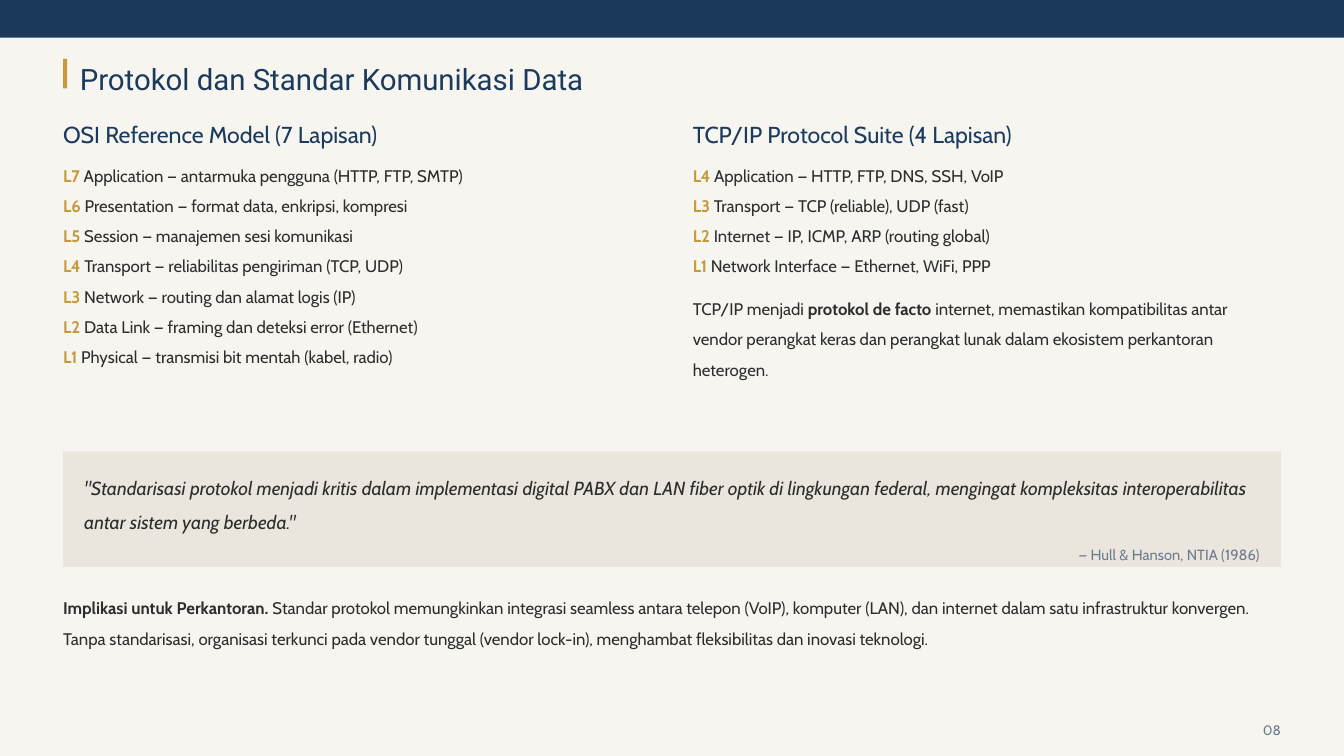
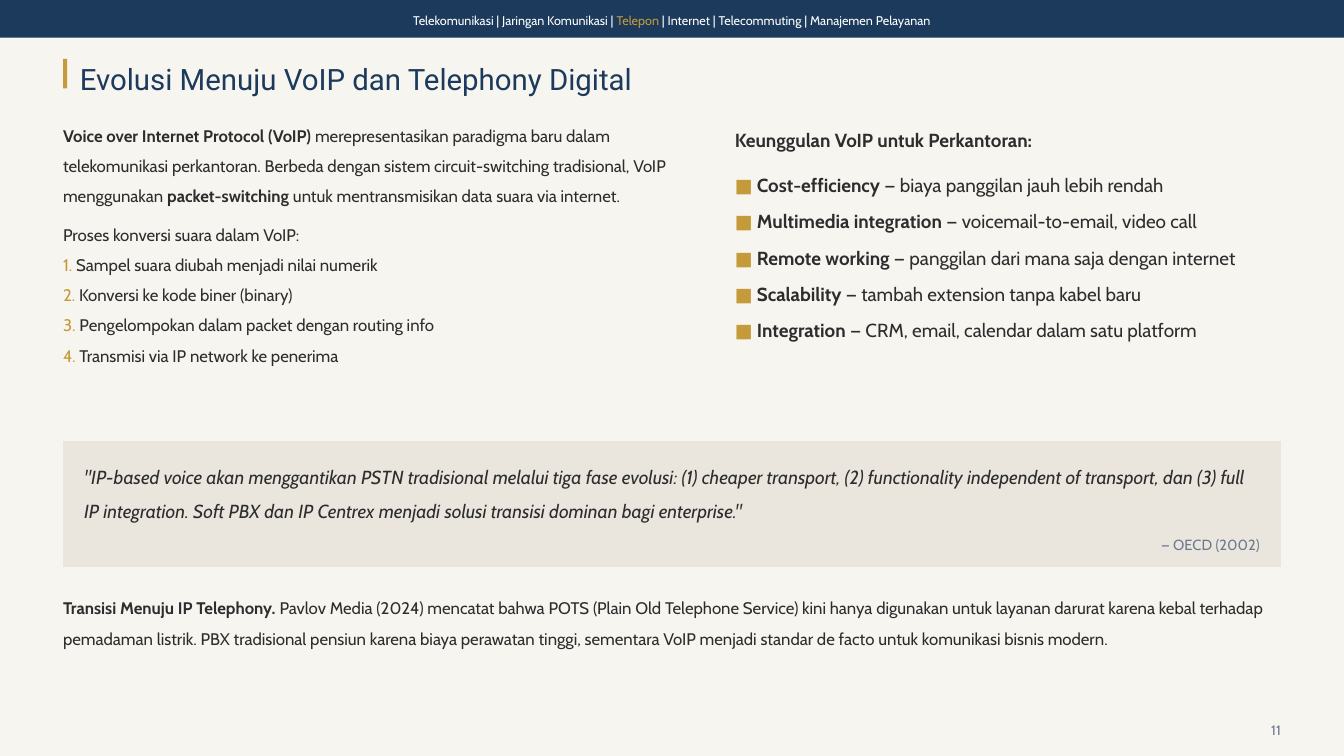
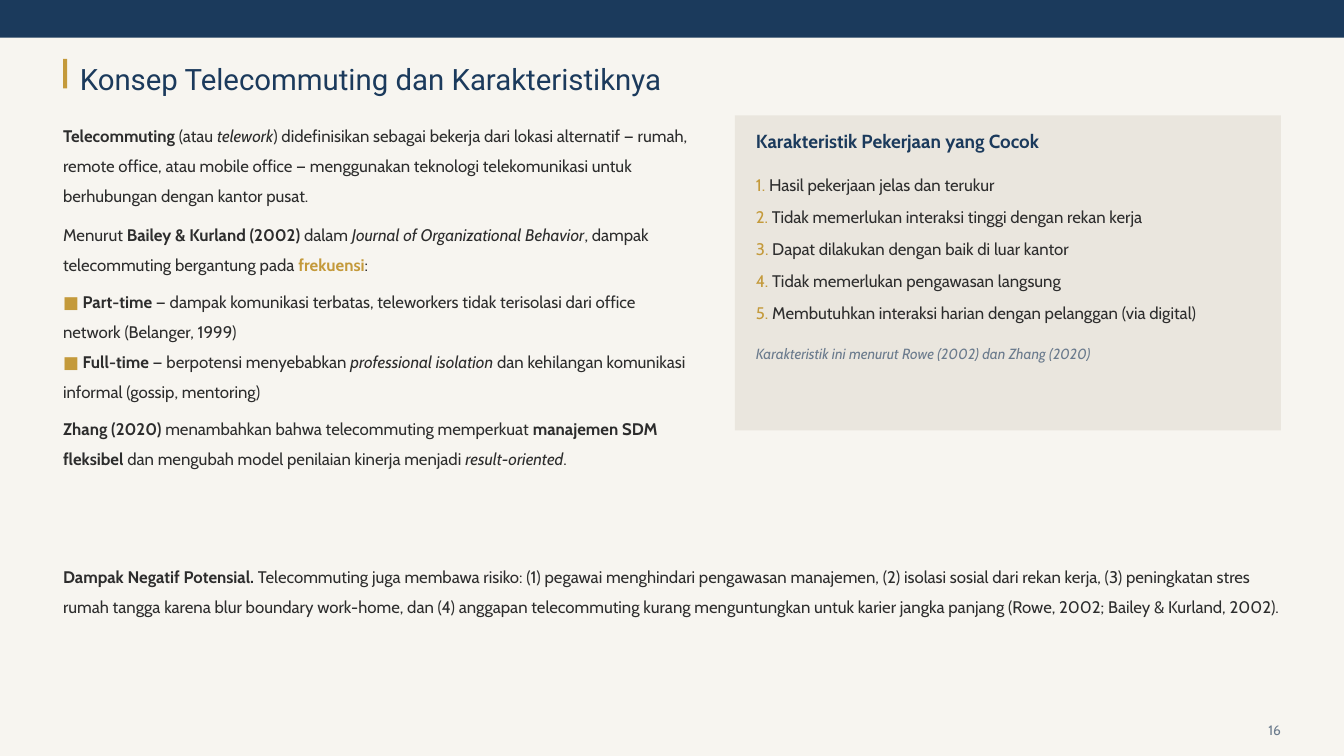
from dataclasses import dataclass
from typing import NamedTuple
from pptx import Presentation
from pptx.dml.color import RGBColor
from pptx.enum.shapes import MSO_SHAPE
from pptx.enum.text import MSO_ANCHOR, MSO_AUTO_SIZE, PP_ALIGN
from pptx.util import Cm, Pt

RECT = MSO_SHAPE.RECTANGLE
TOP, MIDDLE = MSO_ANCHOR.TOP, MSO_ANCHOR.MIDDLE
LEFT, CENTER, RIGHT = PP_ALIGN.LEFT, PP_ALIGN.CENTER, PP_ALIGN.RIGHT
NO_FIT = MSO_AUTO_SIZE.NONE


@dataclass(frozen=True)
class Theme:
    paper: str = "F7F5F0"
    navy: str = "1B3A5C"
    gold: str = "C49A3B"
    sand: str = "EAE6DE"
    ink: str = "2D2D2D"
    mute: str = "6B7B8D"
    white: str = "FFFFFF"
    font: str = "Cabin"
    display: str = "Roboto"
    title: int = 28
    head: int = 22
    lead: int = 18
    body: int = 16
    small: int = 14
    page: int = 13
    nav: int = 12


class Box(NamedTuple):
    x: float
    y: float
    w: float
    h: float

    def inner(self, dx, dy, w, h):
        return Box(self.x + dx, self.y + dy, w, h)

    def place(self):
        return [Cm(side) for side in self]


class Run(NamedTuple):
    text: str
    color: str = ""
    bold: bool = False
    slant: bool = False


@dataclass
class Par:
    runs: list
    gap: int = 0
    size: int = 0
    align: PP_ALIGN = LEFT


T = Theme()
WIDE, HIGH = 45.16, 25.4
EDGE, GAP, BODY = 2.12, 1.4, 3.88
FULL = 40.92
BAND = 1.27
LINE = 0.99
PAD, RISE = 0.71, 0.35


def rgb(code):
    return RGBColor.from_string(code)


def bold(text):
    return Run(text, bold=True)


def slant(text):
    return Run(text, slant=True)


def gold(text, heavy=False):
    return Run(text, T.gold, heavy)


def plain(text, color="", **more):
    return Par([Run(text, color)], **more)


def tagged(rows):
    return [Par([gold(tag, True), Run(f" {text}")]) for tag, text in rows]


def numbered(items):
    return [Par([gold(f"{n}."), Run(f" {text}")]) for n, text in enumerate(items, 1)]


def bullet(term, *rest, gap=0):
    return Par([gold("■ "), bold(term), *rest], gap)


def fill(frame, pars, size, space, anchor=TOP, wrap=True, font=T.font):
    frame.auto_size = NO_FIT
    frame.word_wrap = wrap
    frame.vertical_anchor = anchor
    frame.margin_left = frame.margin_top = frame.margin_right = frame.margin_bottom = 0
    for n, par in enumerate(pars):
        line = frame.add_paragraph() if n else frame.paragraphs[0]
        line.alignment = par.align
        line.line_spacing = space
        line.space_before = Pt(par.gap)
        for item in par.runs:
            run = line.add_run()
            run.text = item.text
            run.font.name = font
            run.font.size = Pt(par.size or size)
            run.font.bold = item.bold
            run.font.italic = item.slant
            run.font.color.rgb = rgb(item.color or T.ink)


def write(slide, box, pars, size=T.body, space=1.5, **more):
    fill(slide.shapes.add_textbox(*box.place()).text_frame, pars, size, space, **more)


def label(slide, box, par, size, space):
    write(slide, box, [par], size, space, anchor=MIDDLE, wrap=False)


def block(slide, box, color):
    shape = slide.shapes.add_shape(RECT, *box.place())
    shape.shadow.inherit = False
    shape.fill.solid()
    shape.fill.fore_color.rgb = rgb(color)
    shape.line.fill.background()


def start(deck, title, page, nav=None):
    slide = deck.slides.add_slide(deck.slide_layouts[5])
    block(slide, Box(0, 0, WIDE, BAND), T.navy)
    if nav:
        label(slide, Box(EDGE, 0, FULL, BAND), Par(nav, align=CENTER), T.nav, 1.2)
    block(slide, Box(EDGE, 1.98, 0.14, LINE), T.gold)
    head = slide.shapes.title
    head.left, head.top, head.width, head.height = Box(2.68, 1.83, 24.69, 1.27).place()
    fill(head.text_frame, [plain(title, T.navy)], T.title, 1.3, MIDDLE, False, T.display)
    label(slide, Box(EDGE + FULL - 2.82, 23.99, 2.82, 0.85),
          plain(page, T.mute, align=RIGHT), T.page, 1.4)
    return slide


def split(left, high):
    return (Box(EDGE, BODY, left, high),
            Box(EDGE + left + GAP, BODY, FULL - left - GAP, high))


def layers(slide, box, head, pars):
    label(slide, box.inner(0, 0, box.w, LINE), plain(head, T.navy), T.head, 1.3)
    write(slide, box.inner(0, 1.34, box.w, box.h - 1.34), pars)


def quote(slide, box, text, source):
    block(slide, box, T.sand)
    pars = [Par([slant(text)]),
            plain(source, T.mute, gap=4, size=T.small, align=RIGHT)]
    write(slide, box.inner(PAD, RISE, box.w - 2 * PAD, 3.53), pars, T.lead, anchor=MIDDLE)


def panel(slide, box, head, items, source):
    block(slide, box, T.sand)
    wide = box.w - 2 * PAD
    label(slide, box.inner(PAD, RISE, wide, LINE), Par([Run(head, T.navy, True)]), T.lead, 1.0)
    note = Par([Run(source, T.mute, slant=True)], 10, T.small)
    write(slide, box.inner(PAD, 1.57, wide, 8.47), numbered(items) + [note], space=1.6)


def remark(slide, top, lead, text):
    write(slide, Box(EDGE, top, FULL, 3.53), [Par([bold(lead), Run(f" {text}")])])


def protocols(deck):
    slide = start(deck, "Protokol dan Standar Komunikasi Data", "08")
    left, right = split(19.76, 10.51)
    layers(slide, left, "OSI Reference Model (7 Lapisan)", tagged([
        ("L7", "Application — antarmuka pengguna (HTTP, FTP, SMTP)"),
        ("L6", "Presentation — format data, enkripsi, kompresi"),
        ("L5", "Session — manajemen sesi komunikasi"),
        ("L4", "Transport — reliabilitas pengiriman (TCP, UDP)"),
        ("L3", "Network — routing dan alamat logis (IP)"),
        ("L2", "Data Link — framing dan deteksi error (Ethernet)"),
        ("L1", "Physical — transmisi bit mentah (kabel, radio)"),
    ]))
    layers(slide, right, "TCP/IP Protocol Suite (4 Lapisan)", tagged([
        ("L4", "Application — HTTP, FTP, DNS, SSH, VoIP"),
        ("L3", "Transport — TCP (reliable), UDP (fast)"),
        ("L2", "Internet — IP, ICMP, ARP (routing global)"),
        ("L1", "Network Interface — Ethernet, WiFi, PPP"),
    ]) + [Par([
        Run("TCP/IP menjadi "), bold("protokol de facto"),
        Run(" internet, memastikan kompatibilitas antar vendor perangkat keras dan "
            "perangkat lunak dalam ekosistem perkantoran heterogen."),
    ], 12)])
    quote(slide, Box(EDGE, 15.17, FULL, 3.88),
          '"Standarisasi protokol menjadi kritis dalam implementasi digital PABX dan LAN '
          'fiber optik di lingkungan federal, mengingat kompleksitas interoperabilitas '
          'antar sistem yang berbeda."', "— Hull & Hanson, NTIA (1986)")
    remark(slide, 19.76, "Implikasi untuk Perkantoran.",
           "Standar protokol memungkinkan integrasi seamless antara telepon (VoIP), komputer "
           "(LAN), dan internet dalam satu infrastruktur konvergen. Tanpa standarisasi, "
           "organisasi terkunci pada vendor tunggal (vendor lock-in), menghambat "
           "fleksibilitas dan inovasi teknologi.")


def voip(deck):
    slide = start(deck, "Evolusi Menuju VoIP dan Telephony Digital", "11", [
        Run("Telekomunikasi | Jaringan Komunikasi | ", T.white), gold("Telepon"),
        Run(" | Internet | Telecommuting | Manajemen Pelayanan", T.white)])
    left, right = split(21.17, 10.5)
    write(slide, left, [
        Par([bold("Voice over Internet Protocol (VoIP)"),
             Run(" merepresentasikan paradigma baru dalam telekomunikasi perkantoran. Berbeda "
                 "dengan sistem circuit-switching tradisional, VoIP menggunakan "),
             bold("packet-switching"),
             Run(" untuk mentransmisikan data suara via internet.")]),
        plain("Proses konversi suara dalam VoIP:", gap=8),
        *numbered(["Sampel suara diubah menjadi nilai numerik",
                   "Konversi ke kode biner (binary)",
                   "Pengelompokan dalam packet dengan routing info",
                   "Transmisi via IP network ke penerima"]),
    ])
    gains = [("Cost-efficiency", "biaya panggilan jauh lebih rendah"),
             ("Multimedia integration", "voicemail-to-email, video call"),
             ("Remote working", "panggilan dari mana saja dengan internet"),
             ("Scalability", "tambah extension tanpa kabel baru"),
             ("Integration", "CRM, email, calendar dalam satu platform")]
    write(slide, right, [Par([bold("Keunggulan VoIP untuk Perkantoran:")])] + [
        bullet(term, Run(f" — {text}"), gap=0 if n else 8)
        for n, (term, text) in enumerate(gains)], T.lead, 1.6)
    quote(slide, Box(EDGE, 14.82, FULL, 4.23),
          '"IP-based voice akan menggantikan PSTN tradisional melalui tiga fase evolusi: '
          '(1) cheaper transport, (2) functionality independent of transport, dan (3) full '
          'IP integration. Soft PBX dan IP Centrex menjadi solusi transisi dominan bagi '
          'enterprise."', "— OECD (2002)")
    remark(slide, 19.76, "Transisi Menuju IP Telephony.",
           "Pavlov Media (2024) mencatat bahwa POTS (Plain Old Telephone Service) kini hanya "
           "digunakan untuk layanan darurat karena kebal terhadap pemadaman listrik. PBX "
           "tradisional pensiun karena biaya perawatan tinggi, sementara VoIP menjadi standar "
           "de facto untuk komunikasi bisnis modern.")


def remote(deck):
    slide = start(deck, "Konsep Telecommuting dan Karakteristiknya", "16")
    left, right = split(21.17, 10.58)
    write(slide, left.inner(0, 0, left.w, 14.11), [
        Par([bold("Telecommuting"), Run(" (atau "), slant("telework"),
             Run(") didefinisikan sebagai bekerja dari lokasi alternatif — rumah, remote "
                 "office, atau mobile office — menggunakan teknologi telekomunikasi untuk "
                 "berhubungan dengan kantor pusat.")]),
        Par([Run("Menurut "), bold("Bailey & Kurland (2002)"), Run(" dalam "),
             slant("Journal of Organizational Behavior"),
             Run(", dampak telecommuting bergantung pada "),
             gold("frekuensi", True), Run(":")], 8),
        bullet("Part-time",
               Run(" — dampak komunikasi terbatas, teleworkers tidak terisolasi dari office "
                   "network (Belanger, 1999)"), gap=6),
        bullet("Full-time", Run(" — berpotensi menyebabkan "),
               slant("professional isolation"),
               Run(" dan kehilangan komunikasi informal (gossip, mentoring)")),
        Par([bold("Zhang (2020)"), Run(" menambahkan bahwa telecommuting memperkuat "),
             bold("manajemen SDM fleksibel"),
             Run(" dan mengubah model penilaian kinerja menjadi "),
             slant("result-oriented"), Run(".")], 6),
    ])
    panel(slide, right, "Karakteristik Pekerjaan yang Cocok",
          ["Hasil pekerjaan jelas dan terukur",
           "Tidak memerlukan interaksi tinggi dengan rekan kerja",
           "Dapat dilakukan dengan baik di luar kantor",
           "Tidak memerlukan pengawasan langsung",
           "Membutuhkan interaksi harian dengan pelanggan (via digital)"],
          "Karakteristik ini menurut Rowe (2002) dan Zhang (2020)")
    remark(slide, 18.7, "Dampak Negatif Potensial.",
           "Telecommuting juga membawa risiko: (1) pegawai menghindari pengawasan manajemen, "
           "(2) isolasi sosial dari rekan kerja, (3) peningkatan stres rumah tangga karena "
           "blur boundary work-home, dan (4) anggapan telecommuting kurang menguntungkan "
           "untuk karier jangka panjang (Rowe, 2002; Bailey & Kurland, 2002).")


def main():
    deck = Presentation()
    deck.slide_width, deck.slide_height = Cm(WIDE), Cm(HIGH)
    back = deck.slide_master.background.fill
    back.solid()
    back.fore_color.rgb = rgb(T.paper)
    for build in (protocols, voip, remote):
        build(deck)
    deck.save("out.pptx")


if __name__ == "__main__":
    main()
